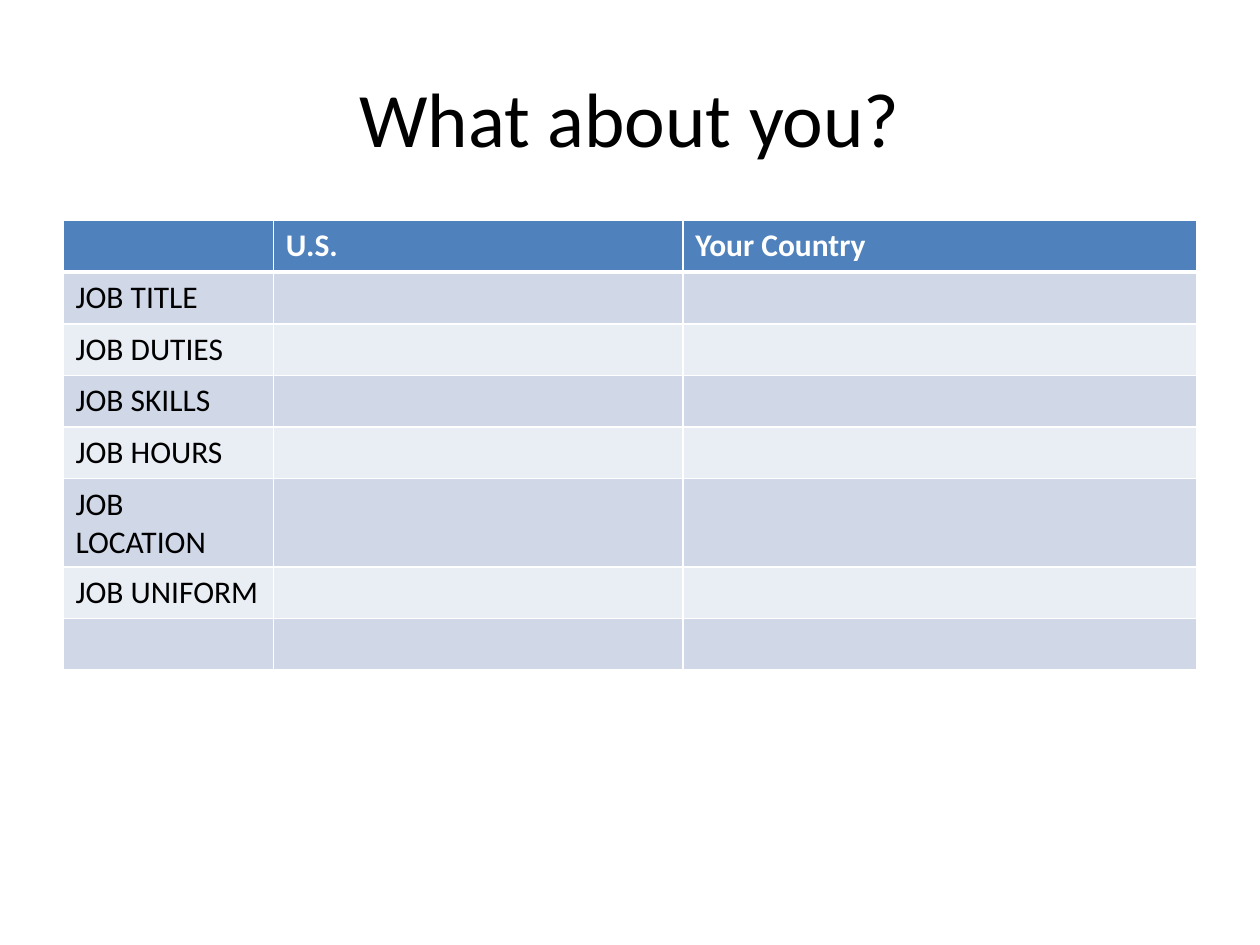
from lxml.etree import SubElement
from pptx import Presentation
from pptx.dml.color import RGBColor as RGB
from pptx.enum.text import MSO_ANCHOR as Anchor, PP_ALIGN as Align
from pptx.oxml.ns import qn
from pptx.util import Inches, Pt

TITLE = "What about you?"
HEADERS = ["", "U.S.", "Your Country"]
LABELS = ["JOB TITLE", "JOB DUTIES", "JOB SKILLS", "JOB HOURS",
          "JOB LOCATION", "JOB UNIFORM", ""]
COL_WIDTHS = [1.67, 3.25, 4.08]
ROW_HEIGHT = 0.41
LEFT, WIDTH = 0.5, 9

THEME = {
    "font": "Calibri",
    "title": {"size": Pt(44), "bold": False, "color": "000000"},
    "header": {"size": Pt(18), "bold": True, "color": "FFFFFF"},
    "body": {"size": Pt(18), "bold": False, "color": "000000"},
    "header_fill": "4F81BD",
    "bands": ["D0D8E8", "E9EDF4"],
    "border": "FFFFFF",
    "thin": 1,
    "thick": 3,
}


def write(p, text, style):
    r = p.add_run()
    r.text = text
    r.font.name = THEME["font"]
    r.font.color.rgb = RGB.from_string(style["color"])
    for name in ("size", "bold"):
        setattr(r.font, name, style[name])


def add_borders(cell, widths):
    """Draw the cell's edges; widths maps L, R, T, B to points."""
    tc_pr = cell._tc.get_or_add_tcPr()
    for side, width in widths.items():
        ln = SubElement(tc_pr, qn(f"a:ln{side}"), w=str(Pt(width)))
        fill = SubElement(ln, qn("a:solidFill"))
        SubElement(fill, qn("a:srgbClr"), val=THEME["border"])


def add_title(slide):
    box = slide.shapes.add_textbox(Inches(LEFT), Inches(0.3),
                                   Inches(WIDTH), Inches(1.25))
    tf = box.text_frame
    tf.word_wrap = True
    tf.vertical_anchor = Anchor.MIDDLE
    p = tf.paragraphs[0]
    p.alignment = Align.CENTER
    write(p, TITLE, THEME["title"])


def add_job_table(slide):
    rows = [HEADERS] + [[label, "", ""] for label in LABELS]
    table = slide.shapes.add_table(
        len(rows), len(COL_WIDTHS), Inches(LEFT), Inches(1.75),
        Inches(WIDTH), Inches(ROW_HEIGHT * len(rows))).table
    for col, width in zip(table.columns, COL_WIDTHS):
        col.width = Inches(width)
    thin, thick = THEME["thin"], THEME["thick"]
    for i, row in enumerate(rows):
        table.rows[i].height = Inches(ROW_HEIGHT)
        style = THEME["body" if i else "header"]
        color = THEME["bands"][(i - 1) % 2] if i else THEME["header_fill"]
        widths = {"L": thin, "R": thin,
                  "T": thick if i == 1 else thin,
                  "B": thick if i == 0 else thin}
        for j, text in enumerate(row):
            cell = table.cell(i, j)
            add_borders(cell, widths)
            cell.fill.solid()
            cell.fill.fore_color.rgb = RGB.from_string(color)
            if text:
                write(cell.text_frame.paragraphs[0], text, style)


def main():
    prs = Presentation()
    prs.slide_width, prs.slide_height = Inches(10), Inches(7.5)
    slide = prs.slides.add_slide(prs.slide_layouts[6])
    add_title(slide)
    add_job_table(slide)
    prs.save("out.pptx")


if __name__ == "__main__":
    main()
